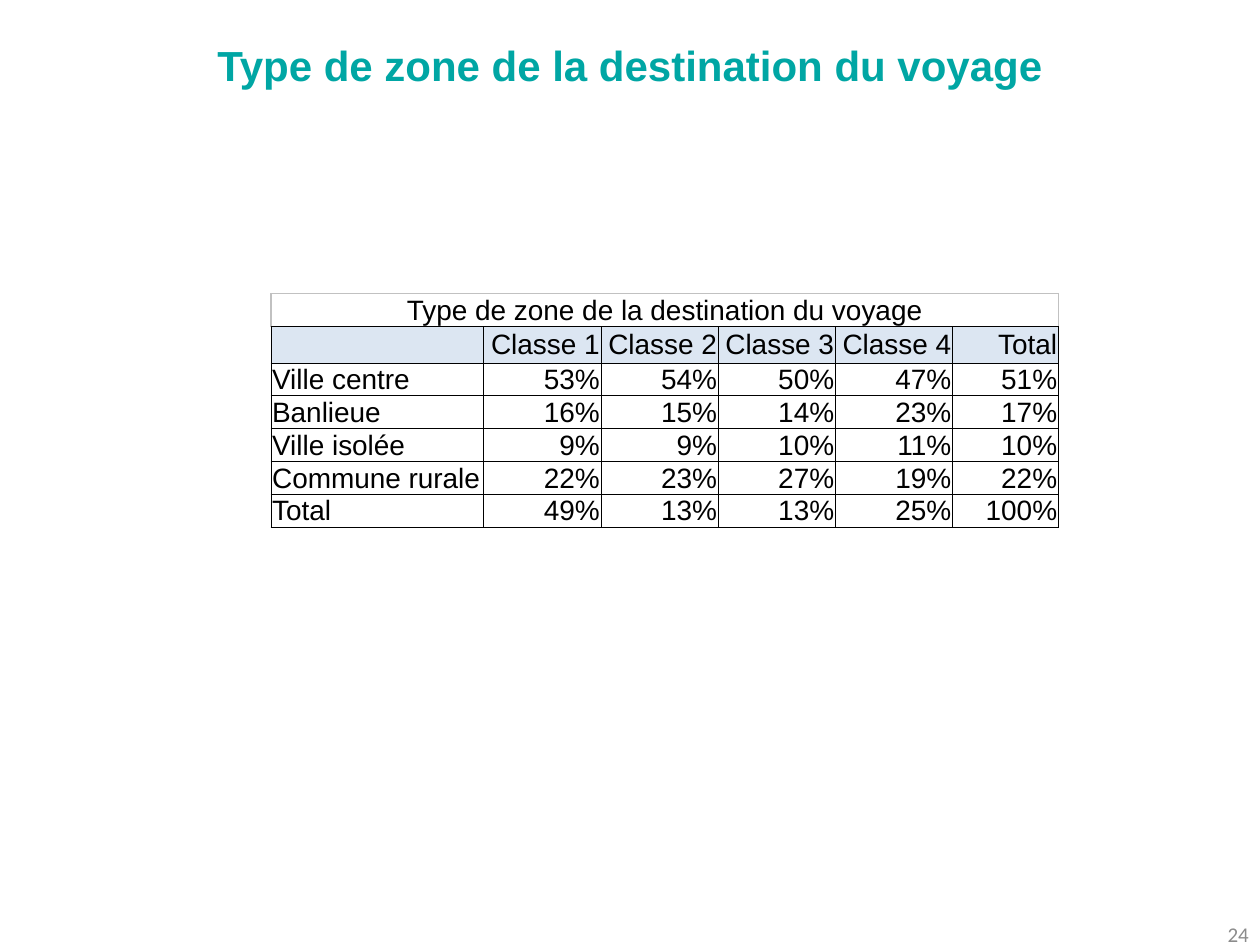
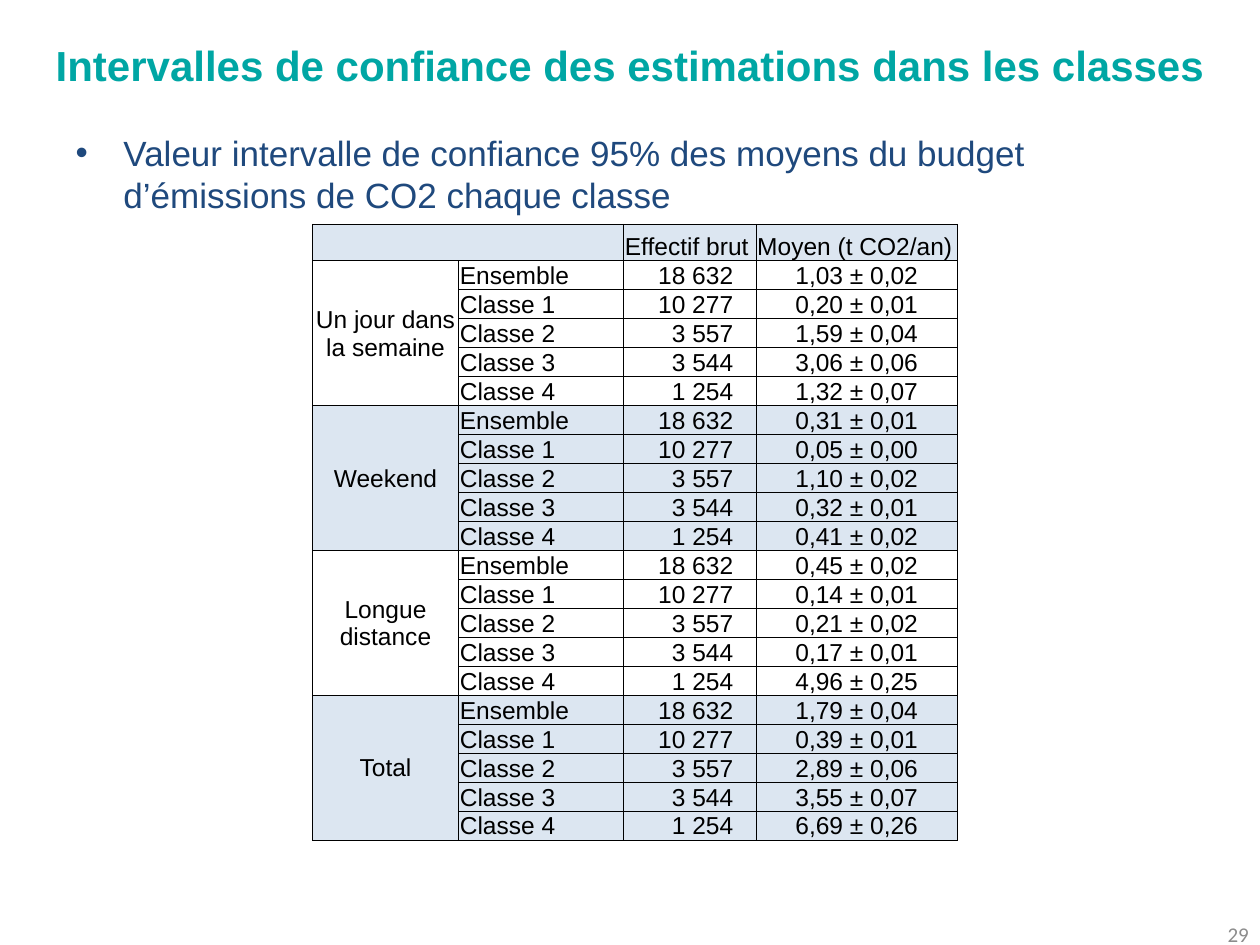
from dataclasses import dataclass

from lxml import etree
from pptx import Presentation
from pptx.dml.color import RGBColor
from pptx.enum.text import MSO_ANCHOR, MSO_AUTO_SIZE, PP_ALIGN
from pptx.oxml.ns import qn
from pptx.util import Emu, Inches, Pt

LEFT, CENTER, RIGHT = PP_ALIGN.LEFT, PP_ALIGN.CENTER, PP_ALIGN.RIGHT
MIDDLE, BOTTOM = MSO_ANCHOR.MIDDLE, MSO_ANCHOR.BOTTOM
NO_FIT = MSO_AUTO_SIZE.NONE

COLORS = {
    "title": "00A6A4",
    "body": "1F497D",
    "number": "8C8C8C",
    "text": "000000",
    "line": "000000",
    "frame": "C1C1C1",
    "header": "DCE6F2",
    "band": "DCE6F1",
}
WIDTH, HEIGHT = Inches(10), Inches(7.5)
TITLE_LAYOUT, CONTENT_LAYOUT = 5, 1
CELL_MARGIN = Inches(0.01)
COUNT_MARGIN = Inches(0.18)


def px(percent: float) -> Emu:
    return Emu(round(WIDTH * percent / 100))


def py(percent: float) -> Emu:
    return Emu(round(HEIGHT * percent / 100))


@dataclass(frozen=True)
class Box:
    left: float
    top: float
    width: float
    height: float

    def emu(self) -> tuple[Emu, Emu, Emu, Emu]:
        return px(self.left), py(self.top), px(self.width), py(self.height)


@dataclass(frozen=True)
class Grid:
    left: float
    top: float
    columns: tuple[float, ...]
    row_height: float
    size: int


TITLE_BOX = Box(0, 2.8, 100, 8.13)
BODY_BOX = Box(5, 13.2, 90, 80.8)
NUMBER_BOX = Box(76.8, 96.13, 23.3, 5.33)
ZONE_GRID = Grid(21.5, 31.07, (16.9, 9.3, 9.3, 9.3, 9.3, 8.4), 3.47, 16)
BUDGET_GRID = Grid(24.8, 23.73, (11.6, 13.1, 10.5, 16), 3.07, 14)

CLASSES = ("Classe 1", "Classe 2", "Classe 3", "Classe 4")
ZONE_TITLE = "Type de zone de la destination du voyage"
ZONES = (
    ("", *CLASSES, "Total"),
    ("Ville centre", "53%", "54%", "50%", "47%", "51%"),
    ("Banlieue", "16%", "15%", "14%", "23%", "17%"),
    ("Ville isolée", "9%", "9%", "10%", "11%", "10%"),
    ("Commune rurale", "22%", "23%", "27%", "19%", "22%"),
    ("Total", "49%", "13%", "13%", "25%", "100%"),
)
GROUPS = ("Ensemble", *CLASSES)
COUNTS = ("18 632", "10 277", "3 557", "3 544", "1 254")
BUDGETS = {
    "Un jour dans la semaine": ("1,03 ± 0,02", "0,20 ± 0,01", "1,59 ± 0,04", "3,06 ± 0,06", "1,32 ± 0,07"),
    "Weekend": ("0,31 ± 0,01", "0,05 ± 0,00", "1,10 ± 0,02", "0,32 ± 0,01", "0,41 ± 0,02"),
    "Longue distance": ("0,45 ± 0,02", "0,14 ± 0,01", "0,21 ± 0,02", "0,17 ± 0,01", "4,96 ± 0,25"),
    "Total": ("1,79 ± 0,04", "0,39 ± 0,01", "2,89 ± 0,06", "3,55 ± 0,07", "6,69 ± 0,26"),
}


def write(tf, text: str, *, size: int, color: str = "text", font: str = "Arial",
          bold: bool = False, align=LEFT) -> None:
    p = tf.paragraphs[0]
    p.alignment = align
    p.space_before = Pt(0)
    r = p.add_run()
    r.text = text
    r.font.size = Pt(size)
    r.font.name = font
    r.font.bold = bold
    r.font.color.rgb = RGBColor.from_string(COLORS[color])


def place(sp, box: Box, anchor=None):
    sp.left, sp.top, sp.width, sp.height = box.emu()
    tf = sp.text_frame
    tf.word_wrap = True
    tf.auto_size = NO_FIT
    if anchor is not None:
        tf.vertical_anchor = anchor
    return tf


def add_slide(prs, layout: int, title: str, number: int):
    s = prs.slides.add_slide(prs.slide_layouts[layout])
    write(place(s.shapes.title, TITLE_BOX, MIDDLE), title,
          size=24, color="title", bold=True, align=CENTER)
    sp = s.shapes.add_textbox(*NUMBER_BOX.emu())
    write(place(sp, NUMBER_BOX, MIDDLE), str(number),
          size=12, color="number", font="Calibri", align=RIGHT)
    return s


def add_bullet(sp, text: str) -> None:
    tf = place(sp, BODY_BOX)
    ppr = tf.paragraphs[0]._p.get_or_add_pPr()
    ppr.set("marL", str(Inches(0.38)))
    ppr.set("indent", str(-Inches(0.38)))
    etree.SubElement(ppr, qn("a:buFont"), typeface="Arial")
    etree.SubElement(ppr, qn("a:buChar"), char="•")
    write(tf, text, size=20, color="body")


def set_borders(cell, frame: bool = False) -> None:
    tcpr = cell._tc.get_or_add_tcPr()
    for side in "LRTB":
        grey = frame and side != "B"
        ln = etree.SubElement(tcpr, qn(f"a:ln{side}"), w=str(Pt(1 if grey else 0.5)))
        fill = etree.SubElement(ln, qn("a:solidFill"))
        etree.SubElement(fill, qn("a:srgbClr"), val=COLORS["frame" if grey else "line"])


def fill_cell(cell, text: str, *, size: int, align=LEFT, anchor=MIDDLE,
              fill: str | None = None, frame: bool = False, right=CELL_MARGIN) -> None:
    set_borders(cell, frame)
    cell.margin_left = cell.margin_top = CELL_MARGIN
    cell.margin_right, cell.margin_bottom = right, 0
    cell.vertical_anchor = anchor
    if fill:
        cell.fill.solid()
        cell.fill.fore_color.rgb = RGBColor.from_string(COLORS[fill])
    else:
        cell.fill.background()
    write(cell.text_frame, text, size=size, align=align)


def add_grid(s, grid: Grid, rows: int):
    box = Box(grid.left, grid.top, sum(grid.columns), grid.row_height * rows)
    table = s.shapes.add_table(rows, len(grid.columns), *box.emu()).table
    table.first_row = table.horz_banding = False
    for column, width in zip(table.columns, grid.columns):
        column.width = px(width)
    for row in table.rows:
        row.height = py(grid.row_height)
    return table


def add_zone_table(s) -> None:
    size, last = ZONE_GRID.size, len(ZONE_GRID.columns) - 1
    table = add_grid(s, ZONE_GRID, len(ZONES) + 1)
    for j in range(last + 1):
        fill_cell(table.cell(0, j), "" if j else ZONE_TITLE, size=size, align=CENTER, frame=True)
    table.cell(0, 0).merge(table.cell(0, last))
    for i, row in enumerate(ZONES, start=1):
        for j, text in enumerate(row):
            fill_cell(table.cell(i, j), text, size=size, align=RIGHT if j else LEFT,
                      fill="header" if i == 1 else None)


def add_budget_table(s) -> None:
    size, step = BUDGET_GRID.size, len(GROUPS)
    table = add_grid(s, BUDGET_GRID, step * len(BUDGETS) + 1)
    for j, text in enumerate(("", "", "Effectif brut", "Moyen (t CO2/an)")):
        fill_cell(table.cell(0, j), text, size=size, anchor=BOTTOM, fill="band")
    table.cell(0, 0).merge(table.cell(0, 1))
    for k, (period, means) in enumerate(BUDGETS.items()):
        top = 1 + k * step
        fill = "band" if k % 2 else None
        for i, (group, count, mean) in enumerate(zip(GROUPS, COUNTS, means)):
            cells = [table.cell(top + i, j) for j in range(4)]
            fill_cell(cells[0], "" if i else period, size=size, align=CENTER, fill=fill)
            fill_cell(cells[1], group, size=size, anchor=BOTTOM, fill=fill)
            fill_cell(cells[2], count, size=size, align=RIGHT, anchor=BOTTOM,
                      fill=fill, right=COUNT_MARGIN)
            fill_cell(cells[3], mean, size=size, align=CENTER, anchor=BOTTOM, fill=fill)
        table.cell(top, 0).merge(table.cell(top + step - 1, 0))


def main() -> None:
    prs = Presentation()
    prs.slide_width, prs.slide_height = WIDTH, HEIGHT
    add_zone_table(add_slide(prs, TITLE_LAYOUT, ZONE_TITLE, 24))
    s = add_slide(prs, CONTENT_LAYOUT,
                  "Intervalles de confiance des estimations dans les classes", 29)
    add_bullet(s.placeholders[1], "Valeur intervalle de confiance 95% des moyens "
               "du budget d’émissions de CO2 chaque classe")
    add_budget_table(s)
    prs.save("out.pptx")


if __name__ == "__main__":
    main()
